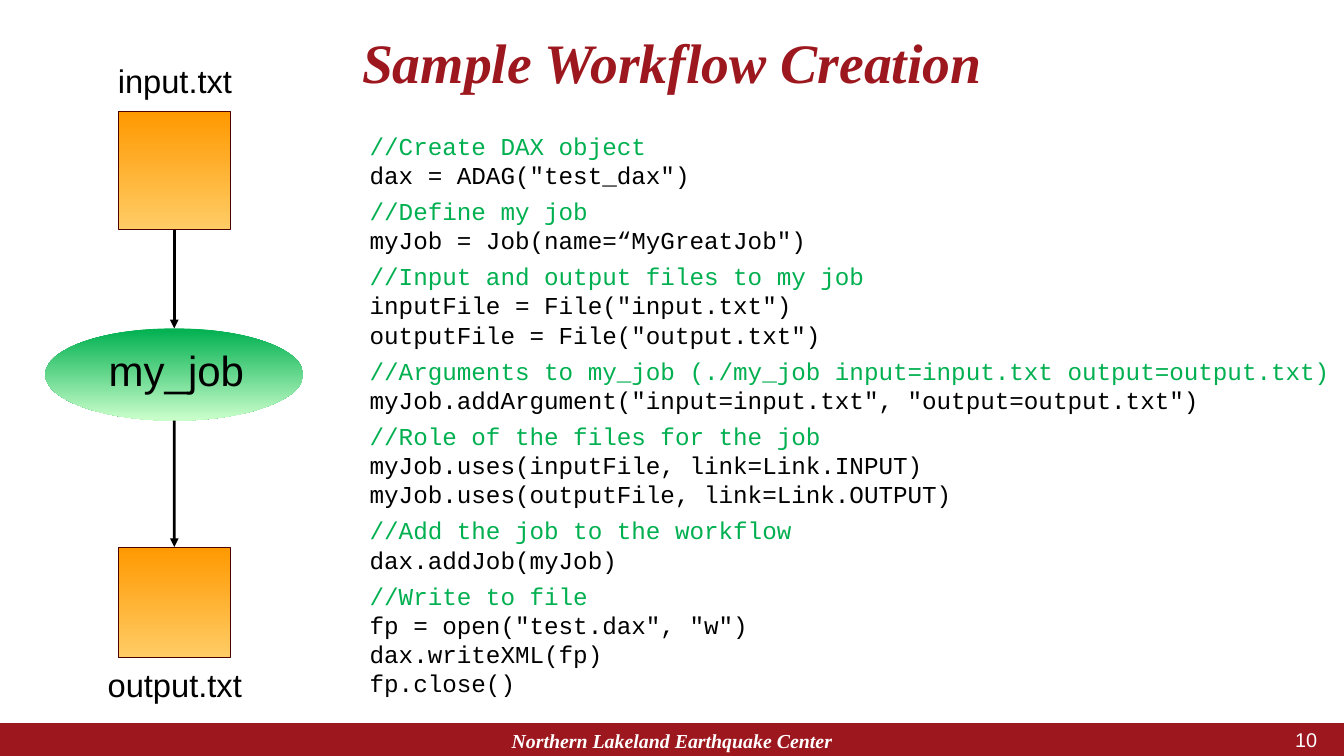
from dataclasses import dataclass

from lxml import etree
from pptx import Presentation
from pptx.dml.color import RGBColor
from pptx.enum.shapes import MSO_CONNECTOR, MSO_SHAPE
from pptx.enum.text import MSO_ANCHOR, MSO_AUTO_SIZE, PP_ALIGN
from pptx.oxml.ns import qn
from pptx.shapes.autoshape import Shape
from pptx.shapes.connector import Connector
from pptx.slide import Slide
from pptx.text.text import TextFrame
from pptx.util import Cm, Pt

RECT, OVAL = MSO_SHAPE.RECTANGLE, MSO_SHAPE.OVAL
STRAIGHT = MSO_CONNECTOR.STRAIGHT
LEFT, CENTER, RIGHT = PP_ALIGN.LEFT, PP_ALIGN.CENTER, PP_ALIGN.RIGHT
TOP, MIDDLE = MSO_ANCHOR.TOP, MSO_ANCHOR.MIDDLE
TOP_SITE, BOTTOM_SITE = 0, 2


@dataclass(frozen=True)
class Theme:
    brand: str = "9D171E"
    white: str = "FFFFFF"
    black: str = "000000"
    comment: str = "00B050"
    file_border: str = "4C0000"
    file_fill: tuple[str, str] = ("FF9900", "FFCC66")
    job_fill: tuple[str, str] = ("00B050", "CCFFCC")
    sans: str = "Arial"
    serif: str = "Times New Roman"
    mono: str = "Courier New"
    title_size: float = 47.7
    job_size: float = 36
    file_size: float = 28
    code_size: float = 20.8
    footer_size: float = 17


THEME = Theme()


@dataclass(frozen=True)
class Box:
    """Position and size in centimetres."""
    left: float
    top: float
    width: float
    height: float

    def emu(self) -> tuple[Cm, Cm, Cm, Cm]:
        return Cm(self.left), Cm(self.top), Cm(self.width), Cm(self.height)


@dataclass(frozen=True)
class TextStyle:
    font: str
    size: float
    color: str
    align: PP_ALIGN = CENTER
    anchor: MSO_ANCHOR = TOP
    emphasis: bool = False
    margins: tuple[float, float] = (0.3, 0.15)
    spacing: float = 1.0
    grow: bool = False


@dataclass(frozen=True)
class Label:
    text: str
    box: Box
    style: TextStyle


@dataclass(frozen=True)
class CodeStep:
    comment: str
    statements: tuple[str, ...]


TITLE = TextStyle(THEME.serif, THEME.title_size, THEME.brand, emphasis=True, spacing=0.9)
FOOTER = TextStyle(THEME.serif, THEME.footer_size, THEME.white, anchor=MIDDLE, emphasis=True)
PAGE = TextStyle(THEME.sans, THEME.footer_size, THEME.white, RIGHT, MIDDLE)
JOB = TextStyle(THEME.sans, THEME.job_size, THEME.black, margins=(0.25, 0.13), grow=True)
FILE = TextStyle(THEME.sans, THEME.file_size, THEME.black, margins=(0.25, 0.13), grow=True)
COMMENT = TextStyle(THEME.mono, THEME.code_size, THEME.comment, LEFT)
STATEMENT = TextStyle(THEME.mono, THEME.code_size, THEME.black, LEFT)

SLIDE_WIDTH, SLIDE_HEIGHT = 40.64, 22.86
FOOTER_BAR = Box(0, 21.87, SLIDE_WIDTH, 0.99)
INPUT_FILE = Box(3.58, 3.38, 3.38, 3.56)
JOB_OVAL = Box(1.37, 9.93, 7.8, 2.79)
OUTPUT_FILE = Box(3.58, 16.54, 3.38, 3.35)
CODE_BOX = Box(10.85, 3.81, 29.79, 17.58)

LABELS = (
    Label("Sample Workflow Creation", Box(1.02, 0.91, 38.61, 2.13), TITLE),
    Label("10", Box(36.32, 22.07, 3.81, 0.61), PAGE),
    Label("my_job", Box(1.27, 10.29, 8.13, 1.8), JOB),
    Label("input.txt", Box(2.24, 1.7, 6.1, 1.45), FILE),
    Label("output.txt", Box(1.22, 19.96, 8.13, 1.45), FILE),
    Label("Northern Lakeland Earthquake Center", Box(13.46, 21.77, 13.72, 1.22), FOOTER),
)

CODE = (
    CodeStep("//Create DAX object", ('dax = ADAG("test_dax")',)),
    CodeStep("//Define my job", ('myJob = Job(name=“MyGreatJob")',)),
    CodeStep("//Input and output files to my job",
             ('inputFile = File("input.txt")', 'outputFile = File("output.txt")')),
    CodeStep("//Arguments to my_job (./my_job input=input.txt output=output.txt)",
             ('myJob.addArgument("input=input.txt", "output=output.txt")',)),
    CodeStep("//Role of the files for the job",
             ("myJob.uses(inputFile, link=Link.INPUT)",
              "myJob.uses(outputFile, link=Link.OUTPUT)")),
    CodeStep("//Add the job to the workflow", ("dax.addJob(myJob)",)),
    CodeStep("//Write to file",
             ('fp = open("test.dax", "w")', "dax.writeXML(fp)", "fp.close()")),
)


def rgb(color: str) -> RGBColor:
    return RGBColor.from_string(color)


def add_filled(slide: Slide, kind: MSO_SHAPE, box: Box, colors: tuple[str, ...],
               border: str | None = None) -> Shape:
    """Add a shape filled with one colour, or with two from top to bottom."""
    shape = slide.shapes.add_shape(kind, *box.emu())
    shape.shadow.inherit = False
    if len(colors) == 1:
        shape.fill.solid()
        shape.fill.fore_color.rgb = rgb(colors[0])
    else:
        shape.fill.gradient()
        shape.fill.gradient_angle = 270
        for stop, color, position in zip(shape.fill.gradient_stops, colors, (0, 1)):
            stop.color.rgb = rgb(color)
            stop.position = position
    if border:
        shape.line.color.rgb = rgb(border)
        shape.line.width = Pt(0.75)
    else:
        shape.line.fill.background()
    return shape


def add_frame(slide: Slide, box: Box, style: TextStyle) -> TextFrame:
    frame = slide.shapes.add_textbox(*box.emu()).text_frame
    frame.word_wrap = True
    frame.auto_size = MSO_AUTO_SIZE.SHAPE_TO_FIT_TEXT if style.grow else MSO_AUTO_SIZE.NONE
    frame.vertical_anchor = style.anchor
    frame.margin_left = frame.margin_right = Cm(style.margins[0])
    frame.margin_top = frame.margin_bottom = Cm(style.margins[1])
    return frame


def write(paragraph, text: str, style: TextStyle) -> None:
    paragraph.text = text
    paragraph.alignment = style.align
    paragraph.line_spacing = style.spacing
    font = paragraph.runs[0].font
    font.name, font.size = style.font, Pt(style.size)
    font.bold = font.italic = style.emphasis
    font.color.rgb = rgb(style.color)


def add_code(slide: Slide) -> None:
    frame = add_frame(slide, CODE_BOX, STATEMENT)
    lines = [(text, COMMENT if index == 0 else STATEMENT)
             for step in CODE
             for index, text in enumerate((step.comment, *step.statements))]
    for number, (text, style) in enumerate(lines):
        paragraph = frame.add_paragraph() if number else frame.paragraphs[0]
        write(paragraph, text, style)
        paragraph.space_before = Pt(6 if style is COMMENT else 0)
        properties = paragraph._p.get_or_add_pPr()
        properties.set("marL", str(Cm(0.79)))
        properties.set("indent", str(Cm(-0.76)))


def add_arrow(slide: Slide, top: float, bottom: float) -> Connector:
    """Add an arrow pointing down the middle of the workflow."""
    center = Cm(INPUT_FILE.left + INPUT_FILE.width / 2)
    arrow = slide.shapes.add_connector(STRAIGHT, center, Cm(top), center, Cm(bottom))
    arrow.line.color.rgb = rgb(THEME.black)
    arrow.line.width = Pt(2.5)
    etree.SubElement(arrow.line._get_or_add_ln(), qn("a:tailEnd"), type="triangle")
    etree.SubElement(arrow._element.spPr, qn("a:effectLst"))
    return arrow


def main() -> None:
    deck = Presentation()
    deck.slide_width, deck.slide_height = Cm(SLIDE_WIDTH), Cm(SLIDE_HEIGHT)
    slide = deck.slides.add_slide(deck.slide_layouts[6])

    add_filled(slide, RECT, FOOTER_BAR, (THEME.brand,))
    job = add_filled(slide, OVAL, JOB_OVAL, THEME.job_fill)
    input_file, output_file = (add_filled(slide, RECT, box, THEME.file_fill, THEME.file_border)
                               for box in (INPUT_FILE, OUTPUT_FILE))
    to_job = add_arrow(slide, INPUT_FILE.top + INPUT_FILE.height, JOB_OVAL.top)
    to_job.begin_connect(input_file, BOTTOM_SITE)
    to_job.end_connect(job, TOP_SITE)
    to_output = add_arrow(slide, JOB_OVAL.top + JOB_OVAL.height, OUTPUT_FILE.top)
    to_output.end_connect(output_file, TOP_SITE)

    for label in LABELS:
        write(add_frame(slide, label.box, label.style).paragraphs[0], label.text, label.style)
    add_code(slide)
    deck.save("out.pptx")


if __name__ == "__main__":
    main()
